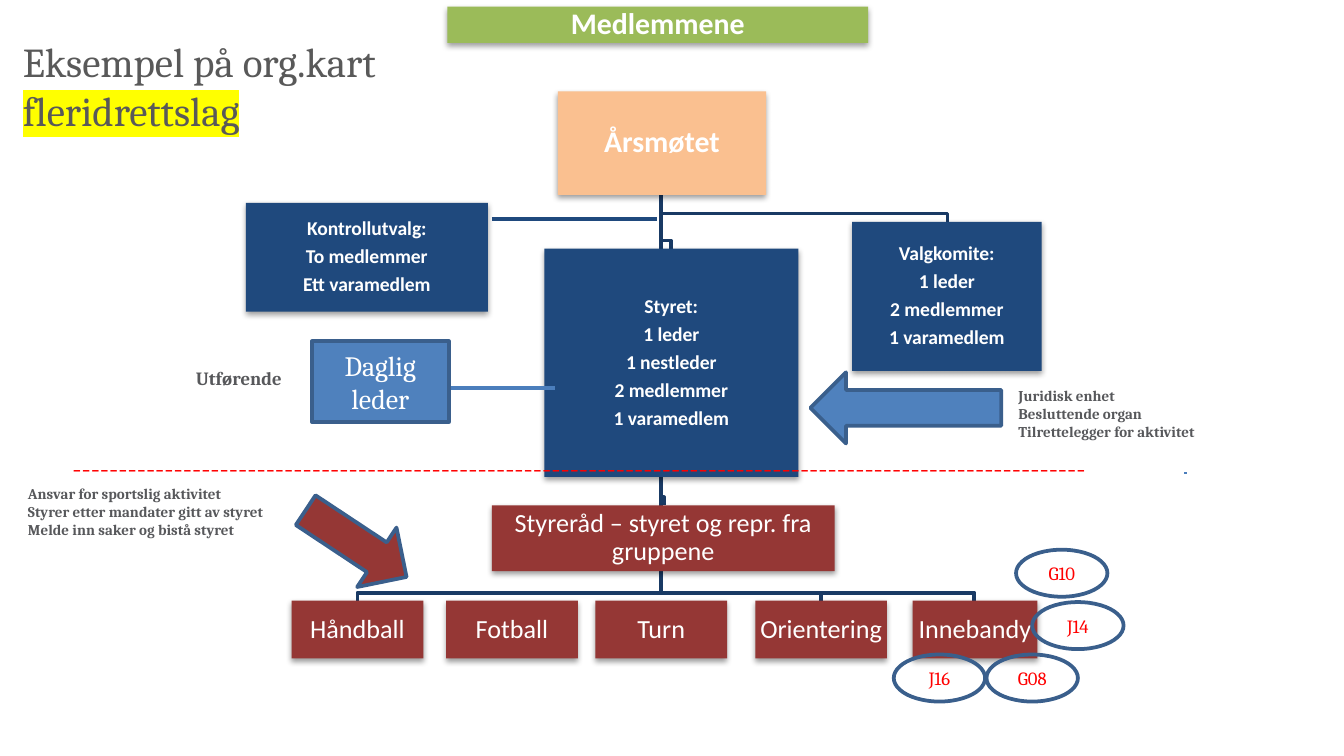
from lxml.etree import SubElement
from pptx import Presentation
from pptx.dml.color import RGBColor
from pptx.enum.shapes import MSO_CONNECTOR, MSO_SHAPE
from pptx.enum.text import MSO_ANCHOR, MSO_AUTO_SIZE, PP_ALIGN
from pptx.oxml.ns import qn
from pptx.util import Inches, Pt

# Theme: colours, fonts and type sizes
THEME = {
    "white": "FFFFFF", "green": "9BBB59", "peach": "FAC090", "navy": "1F497D",
    "wine": "953735", "blue": "4F81BD", "edge": "3A5F8C", "wire": "193A64",
    "link": "4B7EBC", "red": "FF0000", "gray": "57585B", "title": "595959",
    "mark": "FFFF00",
}
SANS, SERIF = "Calibri", "Cambria"
STYLES = {
    "head": dict(name=SANS, size=16, bold=True, color="white"),
    "role": dict(name=SANS, size=10.5, bold=True, color="white"),
    "group": dict(name=SANS, size=14, bold=False, color="white"),
    "lead": dict(name=SERIF, size=15, bold=False, color="white"),
    "team": dict(name=SERIF, size=10, bold=False, color="red"),
    "dash": dict(name=SERIF, size=15, bold=False, color="red"),
    "note": dict(name=SERIF, size=8, bold=True, color="gray"),
    "label": dict(name=SERIF, size=10, bold=True, color="gray"),
    "title": dict(name=SERIF, size=22, bold=False, color="title"),
}

# Content: place is left, top, width, height in inches
TITLE = ["Eksempel på org.kart", "fleridrettslag"]
BOXES = [
    (["Medlemmene"], (3.33, 0.05, 3.13, 0.27), "green", "head"),
    (["Årsmøtet"], (4.15, 0.68, 1.55, 0.77), "peach", "head"),
    (["Styret:", "1 leder", "1 nestleder", "2 medlemmer", "1 varamedlem"],
     (4.05, 1.85, 1.89, 1.7), "navy", "role"),
    (["Valgkomite:", "1 leder", "2 medlemmer", "1 varamedlem"],
     (6.34, 1.65, 1.41, 1.11), "navy", "role"),
    (["Kontrollutvalg:", "To medlemmer", "Ett varamedlem"],
     (1.83, 1.51, 1.8, 0.81), "navy", "role"),
    (["Styreråd – styret og repr. fra gruppene"],
     (3.66, 3.76, 2.55, 0.49), "wine", "group"),
]
GROUPS = [("Håndball", 2.17, 0.98), ("Fotball", 3.32, 0.98), ("Turn", 4.43, 0.98),
          ("Orientering", 5.62, 0.98), ("Innebandy", 6.79, 0.93)]
GROUP_TOP, GROUP_HIGH = 4.47, 0.43
TEAMS = [("J16", 6.65, 4.87), ("G08", 7.34, 4.87),
         ("J14", 7.68, 4.48), ("G10", 7.56, 4.09)]
NOTES = [
    (["-" * 110], (0.44, 3.3, 9.4, 0.35), "dash"),
    (["Juridisk enhet", "Besluttende organ", "Tilrettelegger for aktivitet"],
     (7.48, 2.83, 1.7, 0.5), "note"),
    (["Ansvar for sportslig aktivitet", "Styrer etter mandater gitt av styret",
      "Melde inn saker og bistå styret"], (0.11, 3.56, 2.2, 0.5), "note"),
    (["Utførende"], (1.36, 2.68, 0.94, 0.27), "label"),
]
ROOT, DROP = (4.92, 1.45), 0.06
ENDS = [(7.25, 4.47), (7.05, 1.65), (6.11, 4.47), (2.66, 4.47), (4.94, 3.76), (4.99, 1.85)]
LINES = [((8.81, 3.52), (8.83, 3.52), "link", 0.75),
         ((3.66, 1.63), (4.89, 1.63), "navy", 2),
         ((3.35, 2.89), (4.13, 2.89), "link", 2)]
ARROWS = [((6.03, 2.77, 1.42, 0.53), 180, "blue"),
          ((2.2, 3.78, 0.9, 0.53), 33.5, "wine")]

# A 16:9 slide
deck = Presentation()
deck.slide_width = Inches(10)
deck.slide_height = Inches(10) * 9 // 16
slide = deck.slides.add_slide(deck.slide_layouts[5])
shapes = slide.shapes


def tint(key):
    return RGBColor.from_string(THEME[key])


def put(item, forms):
    for key, value in forms.items():
        setattr(item, key, value)


def write(shape, lines, style, align=PP_ALIGN.LEFT, frame=None, para=None):
    form = dict(STYLES[style])
    color, size = form.pop("color"), Pt(form.pop("size"))
    text = shape.text_frame
    put(text, {"word_wrap": True, "auto_size": MSO_AUTO_SIZE.NONE, **(frame or {})})
    for i, line in enumerate(lines):
        part = text.paragraphs[0] if i == 0 else text.add_paragraph()
        put(part, {"alignment": align, **(para or {})})
        run = part.add_run()
        run.text = line
        put(run.font, {**form, "size": size})
        run.font.color.rgb = tint(color)


def draw(kind, place, fill=None, line=None):
    shape = shapes.add_shape(kind, *map(Inches, place))
    paint(shape, fill, line)
    return shape


def paint(shape, fill, line):
    shape.shadow.inherit = False
    if fill:
        shape.fill.solid()
        shape.fill.fore_color.rgb = tint(fill)
    else:
        shape.fill.background()
    if line:
        shape.line.color.rgb = tint(line)
        shape.line.width = Pt(2)
    else:
        shape.line.fill.background()


def shade(shape):
    effects = shape._element.spPr.find(qn("a:effectLst"))
    cast = SubElement(effects, qn("a:outerShdw"), blurRad="40000", dist="20000",
                      dir="5400000", rotWithShape="0")
    ink = SubElement(cast, qn("a:srgbClr"), val="000000")
    SubElement(ink, qn("a:alpha"), val="38000")


# Branches run down the stem, across, then into each box
for x, y in ENDS:
    path = [(ROOT[0], y - DROP), (x, y - DROP), (x, y)]
    pen = shapes.build_freeform(*map(Inches, ROOT))
    pen.add_line_segments([(Inches(a), Inches(b)) for a, b in path], close=False)
    paint(pen.convert_to_shape(), None, "wire")

# Organisation boxes
MID = {"vertical_anchor": MSO_ANCHOR.MIDDLE}
TIGHT = {**MID, **{"margin_" + side: Inches(0.01)
                   for side in ("left", "top", "right", "bottom")}}
groups = [([name], (left, GROUP_TOP, wide, GROUP_HIGH), "wine", "group")
          for name, left, wide in GROUPS]
for lines, place, fill, style in BOXES + groups:
    box = draw(MSO_SHAPE.RECTANGLE, place, fill)
    shade(box)
    gap = Pt(0.35 * STYLES[style]["size"])
    write(box, lines, style, PP_ALIGN.CENTER, TIGHT,
          {"line_spacing": 0.9, "space_after": gap})

# Notes and the dashed divider
for lines, place, style in NOTES:
    write(shapes.add_textbox(*map(Inches, place)), lines, style)

# Straight lines
for start, end, color, width in LINES:
    wire = shapes.add_connector(MSO_CONNECTOR.STRAIGHT, *map(Inches, start + end))
    wire.line.color.rgb = tint(color)
    wire.line.width = Pt(width)
    SubElement(wire._element.spPr, qn("a:effectLst"))

# Teams, manager and arrows
for name, left, top in TEAMS:
    oval = draw(MSO_SHAPE.OVAL, (left, top, 0.68, 0.35), None, "edge")
    write(oval, [name], "team", PP_ALIGN.CENTER, MID)
lead = draw(MSO_SHAPE.RECTANGLE, (2.32, 2.54, 1.02, 0.6), "blue", "edge")
write(lead, ["Daglig leder"], "lead", PP_ALIGN.CENTER, MID)
for place, angle, fill in ARROWS:
    draw(MSO_SHAPE.RIGHT_ARROW, place, fill, "edge").rotation = angle

# Title with its second line highlighted
title = shapes.title
put(title, dict(zip(("left", "top", "width", "height"),
                    map(Inches, (0.07, 0.22, 3.1, 0.84)))))
write(title, TITLE, "title", frame={"vertical_anchor": MSO_ANCHOR.TOP})
props = title.text_frame.paragraphs[1].runs[0].font._element
glow = SubElement(props, qn("a:highlight"))
SubElement(glow, qn("a:srgbClr"), val=THEME["mark"])
props.find(qn("a:solidFill")).addnext(glow)

deck.save("out.pptx")
